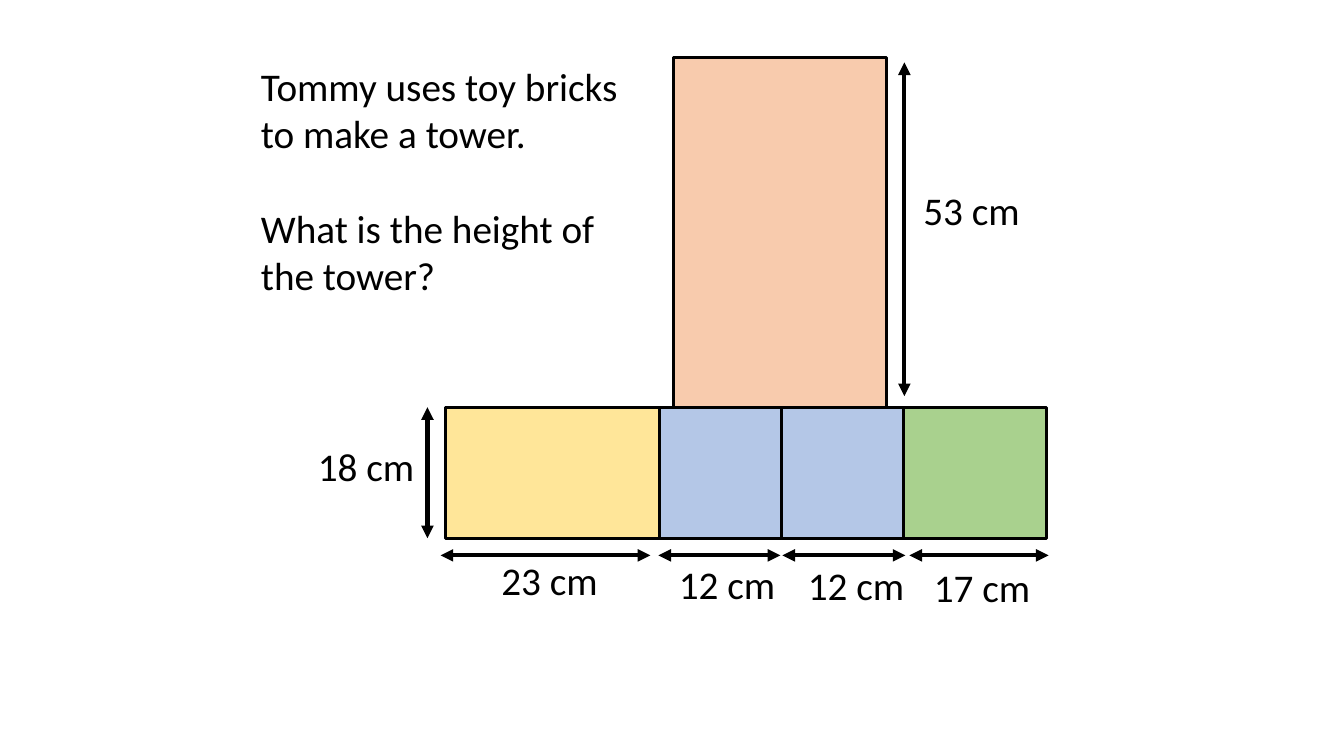
"""Builds a word-problem slide about the height of a toy brick tower."""
import pptx
import pptx.dml.color
import pptx.enum.shapes
import pptx.enum.text
import pptx.oxml.ns
import pptx.util
from lxml import etree

Inches, Pt = pptx.util.Inches, pptx.util.Pt

QUESTION = ["Tommy uses toy bricks to make a tower.", "What is the height of the tower?"]
QUESTION_BOX = (2.49, 0.57, 3.96, 2.46)
TOWER = (6.68, 0.57, 2.11, 3.48, "F8CBAD")
ROW_LEFT, ROW_TOP, ROW_HEIGHT = 4.42, 4.04, 1.3
BRICKS = [(2.12, "FFE699"), (1.21, "B4C7E7"), (1.21, "B4C7E7"), (1.42, "A9D18E")]
WIDTH_ARROW_TOP = 5.51
WIDTHS = [
    ("23 cm", 4.37, 6.45, 4.71, 5.47),
    ("12 cm", 6.53, 7.74, 6.47, 5.51),
    ("12 cm", 7.76, 8.98, 7.75, 5.52),
    ("17 cm", 9.02, 10.4, 9.0, 5.54),
]
HEIGHTS = [
    ("53 cm", 8.97, 0.62, 3.93, (8.58, 1.8, 2.11)),
    ("18 cm", 4.24, ROW_TOP, ROW_TOP + ROW_HEIGHT, (2.89, 4.34, 1.48)),
]
LABEL_WIDTH, LABEL_HEIGHT = 1.48, 0.57
FONT, FONT_SIZE, LINE_SPACE = "Calibri", 28, 34
INK = "000000"


def paint(color_format, color):
    color_format.rgb = pptx.dml.color.RGBColor.from_string(color)


def add_brick(slide, left, top, width, height, color):
    brick = slide.shapes.add_shape(
        pptx.enum.shapes.MSO_SHAPE.RECTANGLE, *map(Inches, (left, top, width, height)))
    brick.shadow.inherit = False
    brick.fill.solid()
    paint(brick.fill.fore_color, color)
    paint(brick.line.color, INK)
    brick.line.width = Pt(2.25)


def add_arrow(slide, *ends):
    arrow = slide.shapes.add_connector(
        pptx.enum.shapes.MSO_CONNECTOR.STRAIGHT, *map(Inches, ends))
    paint(arrow.line.color, INK)
    arrow.line.width = Pt(3)
    outline = arrow.line._get_or_add_ln()
    for end in ("a:headEnd", "a:tailEnd"):
        etree.SubElement(outline, pptx.oxml.ns.qn(end), type="triangle")
    etree.SubElement(arrow._element.spPr, pptx.oxml.ns.qn("a:effectLst"))


def add_text(slide, box, lines, align):
    frame = slide.shapes.add_textbox(*map(Inches, box)).text_frame
    frame.word_wrap = True
    for index, line in enumerate(lines):
        paragraph = frame.add_paragraph() if index else frame.paragraphs[0]
        paragraph.alignment = align
        if index:
            paragraph.space_before = Pt(LINE_SPACE)
        run = paragraph.add_run()
        run.text = line
        run.font.name, run.font.size = FONT, Pt(FONT_SIZE)
        paint(run.font.color, INK)


def main():
    align = pptx.enum.text.PP_ALIGN
    deck = pptx.Presentation()
    deck.slide_width, deck.slide_height = Inches(13.33), Inches(7.5)
    slide = deck.slides.add_slide(deck.slide_layouts[6])

    add_text(slide, QUESTION_BOX, QUESTION, align.LEFT)
    add_brick(slide, *TOWER)
    left = ROW_LEFT
    for width, color in BRICKS:
        add_brick(slide, left, ROW_TOP, width, ROW_HEIGHT, color)
        left += width

    for label, start, end, label_left, label_top in WIDTHS:
        add_arrow(slide, start, WIDTH_ARROW_TOP, end, WIDTH_ARROW_TOP)
        add_text(slide, (label_left, label_top, LABEL_WIDTH, LABEL_HEIGHT), [label], align.CENTER)
    for label, x, top, bottom, label_place in HEIGHTS:
        add_arrow(slide, x, top, x, bottom)
        add_text(slide, (*label_place, LABEL_HEIGHT), [label], align.CENTER)

    deck.save("out.pptx")


if __name__ == "__main__":
    main()
